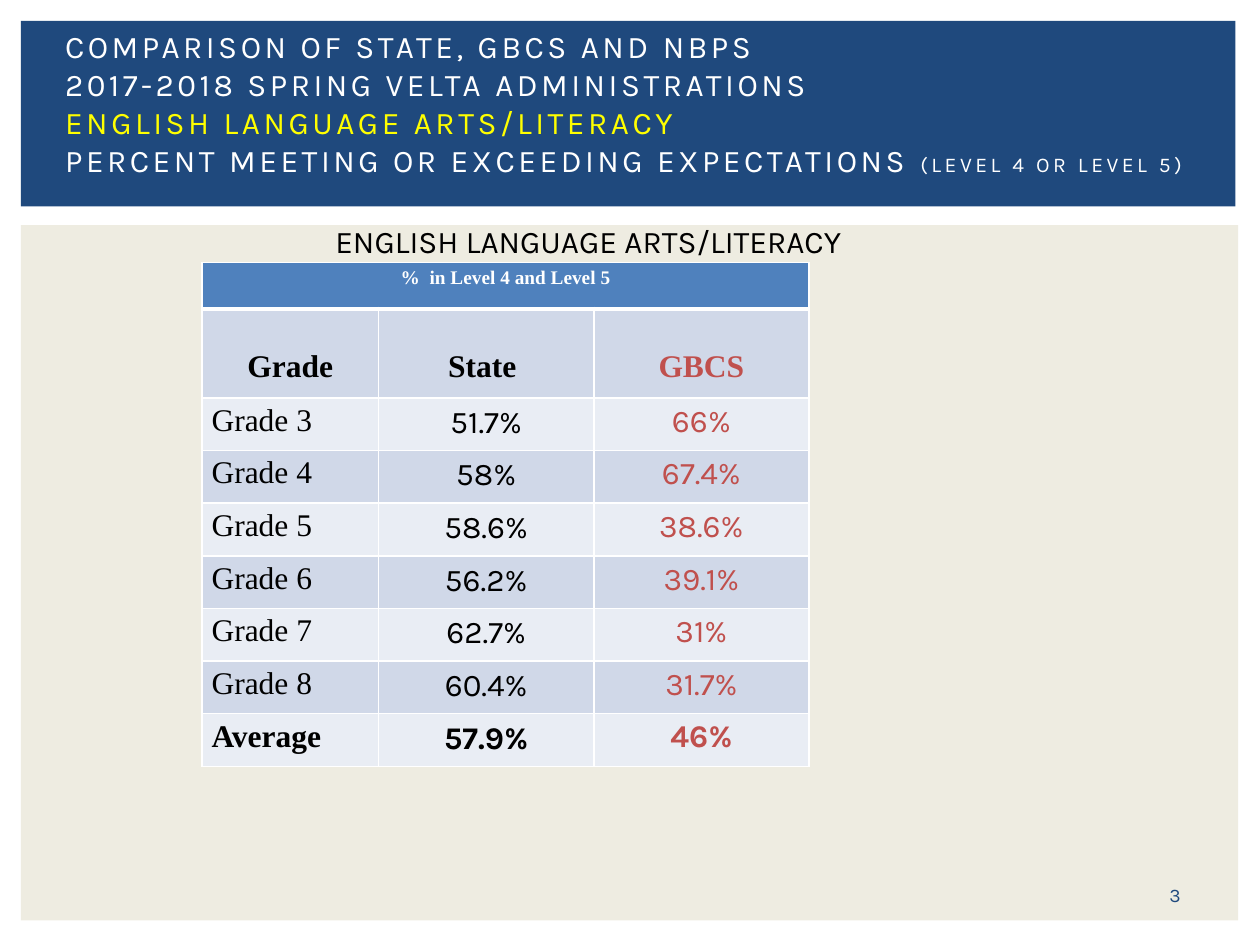
from dataclasses import dataclass

from lxml.etree import SubElement
from pptx import Presentation
from pptx.dml.color import RGBColor
from pptx.enum.shapes import MSO_SHAPE
from pptx.enum.text import MSO_ANCHOR, MSO_AUTO_SIZE, PP_ALIGN
from pptx.oxml.ns import qn
from pptx.util import Pt

WHITE = RGBColor(0xFF, 0xFF, 0xFF)
BLACK = RGBColor(0x00, 0x00, 0x00)
YELLOW = RGBColor(0xFF, 0xFF, 0x00)
NAVY = RGBColor(0x1F, 0x49, 0x7D)
CREAM = RGBColor(0xEE, 0xEC, 0xE1)
BLUE = RGBColor(0x4F, 0x81, 0xBD)
RED = RGBColor(0xC0, 0x50, 0x4D)
DARK_BAND = RGBColor(0xD0, 0xD8, 0xE8)
LIGHT_BAND = RGBColor(0xE9, 0xED, 0xF4)
SANS = "Karla"
SERIF = "Times New Roman"


@dataclass(frozen=True)
class Area:
    left: float
    top: float
    width: float
    height: float

    def lengths(self) -> tuple:
        return Pt(self.left), Pt(self.top), Pt(self.width), Pt(self.height)


@dataclass(frozen=True)
class Style:
    size: float
    color: RGBColor
    font: str = SANS
    bold: bool = False


@dataclass(frozen=True)
class Column:
    heading: str
    width: float
    color: RGBColor
    font: str
    align: PP_ALIGN
    side_margin: float
    edge_margin: float


COLUMNS = [
    Column("Grade", 100.8, BLACK, SERIF, PP_ALIGN.LEFT, 5.4, 3),
    Column("State ", 123, BLACK, SANS, PP_ALIGN.CENTER, 7.2, 3.6),
    Column("GBCS", 123, RED, SANS, PP_ALIGN.CENTER, 5.4, 3),
]
RESULTS = [
    ("Grade 3", "51.7%", "66%"),
    ("Grade 4", "58%", "67.4%"),
    ("Grade 5", "58.6%", "38.6%"),
    ("Grade 6", "56.2%", "39.1%"),
    ("Grade 7", "62.7%", "31%"),
    ("Grade 8", "60.4%", "31.7%"),
    ("Average", "57.9%", "46%"),
]
TITLE_LINES = [
    [("COMPARISON OF STATE, GBCS AND NBPS ", Style(18, WHITE))],
    [("2017-2018 SPRING VELTA ADMINISTRATIONS", Style(18, WHITE))],
    [("ENGLISH LANGUAGE ARTS/LITERACY", Style(18, YELLOW))],
    [("PERCENT MEETING OR EXCEEDING EXPECTATIONS ", Style(18, WHITE)),
     ("(LEVEL 4 OR LEVEL 5)", Style(12, WHITE))],
]
HEADER_HEIGHT, HEADING_HEIGHT, RESULT_HEIGHT = 26.6, 50.8, 30.1


def apply_style(span, style: Style) -> None:
    span.font.size = Pt(style.size)
    span.font.name = style.font
    span.font.bold = style.bold
    span.font.color.rgb = style.color


def add_panel(page, area: Area, color: RGBColor) -> None:
    panel = page.shapes.add_shape(MSO_SHAPE.RECTANGLE, *area.lengths())
    panel.shadow.inherit = False
    panel.fill.solid()
    panel.fill.fore_color.rgb = color
    panel.line.fill.background()


def add_label(page, area: Area, text: str, style: Style,
              align: PP_ALIGN, anchor: MSO_ANCHOR) -> None:
    frame = page.shapes.add_textbox(*area.lengths()).text_frame
    frame.word_wrap = True
    frame.vertical_anchor = anchor
    frame.text = text
    para = frame.paragraphs[0]
    para.alignment = align
    apply_style(para.runs[0], style)


def fill_title(title, area: Area) -> None:
    title.left, title.top, title.width, title.height = area.lengths()
    frame = title.text_frame
    frame.word_wrap = True
    frame.auto_size = MSO_AUTO_SIZE.NONE
    frame.vertical_anchor = MSO_ANCHOR.MIDDLE
    frame.margin_bottom = Pt(25)
    for index, line in enumerate(TITLE_LINES):
        para = frame.add_paragraph() if index else frame.paragraphs[0]
        para.alignment = PP_ALIGN.LEFT
        para.space_before = Pt(0)
        for text, style in line:
            span = para.add_run()
            span.text = text
            apply_style(span, style)
            span.font._element.set("spc", "200")
    # The title is drawn above the panels.
    title.element.getparent().append(title.element)


def set_borders(cell, top: float, bottom: float) -> None:
    properties = cell._tc.get_or_add_tcPr()
    widths = {"a:lnL": 1, "a:lnR": 1, "a:lnT": top, "a:lnB": bottom}
    for tag, width in widths.items():
        line = SubElement(properties, qn(tag), w=str(Pt(width)))
        fill = SubElement(line, qn("a:solidFill"))
        SubElement(fill, qn("a:srgbClr"), val=str(WHITE))


def fill_cell(cell, text: str, style: Style, align: PP_ALIGN, color: RGBColor,
              side: float = 5.4, top: float = 3, bottom: float = 3) -> None:
    cell.margin_left = cell.margin_right = Pt(side)
    cell.margin_top, cell.margin_bottom = Pt(top), Pt(bottom)
    cell.fill.solid()
    cell.fill.fore_color.rgb = color
    cell.text = text
    para = cell.text_frame.paragraphs[0]
    para.alignment = align
    apply_style(para.runs[0], style)


def add_results_table(page, left: float, top: float) -> None:
    heights = [HEADER_HEIGHT, HEADING_HEIGHT] + [RESULT_HEIGHT] * len(RESULTS)
    area = Area(left, top, sum(column.width for column in COLUMNS), sum(heights))
    table = page.shapes.add_table(len(heights), len(COLUMNS), *area.lengths()).table
    for column, described in zip(table.columns, COLUMNS):
        column.width = Pt(described.width)
    for index, height in enumerate(heights):
        table.rows[index].height = Pt(height)
        for cell in table.rows[index].cells:
            set_borders(cell, 3 if index == 1 else 1, 3 if index == 0 else 1)

    header = table.cell(0, 0)
    header.merge(table.cell(0, len(COLUMNS) - 1))
    fill_cell(header, "%  in Level 4 and Level 5", Style(11, WHITE, SERIF, True),
              PP_ALIGN.CENTER, BLUE)
    for position, column in enumerate(COLUMNS):
        fill_cell(table.cell(1, position), column.heading,
                  Style(18, column.color, SERIF, True),
                  PP_ALIGN.CENTER, DARK_BAND, top=23)
        for index, result in enumerate(RESULTS):
            style = Style(18, column.color, column.font, result[0] == "Average")
            fill_cell(table.cell(index + 2, position), result[position], style,
                      column.align, DARK_BAND if index % 2 else LIGHT_BAND,
                      column.side_margin, column.edge_margin, column.edge_margin)


def main() -> None:
    deck = Presentation()
    deck.slide_width, deck.slide_height = Pt(720), Pt(540)
    page = deck.slides.add_slide(deck.slide_layouts[5])
    add_panel(page, Area(12, 128.7, 695.5, 397.3), CREAM)
    add_panel(page, Area(12, 12, 694, 106), NAVY)
    add_results_table(page, 115.5, 150)
    fill_title(page.shapes.title, Area(30, 28, 660, 83))
    add_label(page, Area(648.5, 500.5, 46, 21.5), "3", Style(11, NAVY),
              PP_ALIGN.CENTER, MSO_ANCHOR.MIDDLE)
    add_label(page, Area(184.5, 123.5, 320, 29), "ENGLISH LANGUAGE ARTS/LITERACY",
              Style(18, BLACK), PP_ALIGN.LEFT, MSO_ANCHOR.TOP)
    deck.save("out.pptx")


if __name__ == "__main__":
    main()
